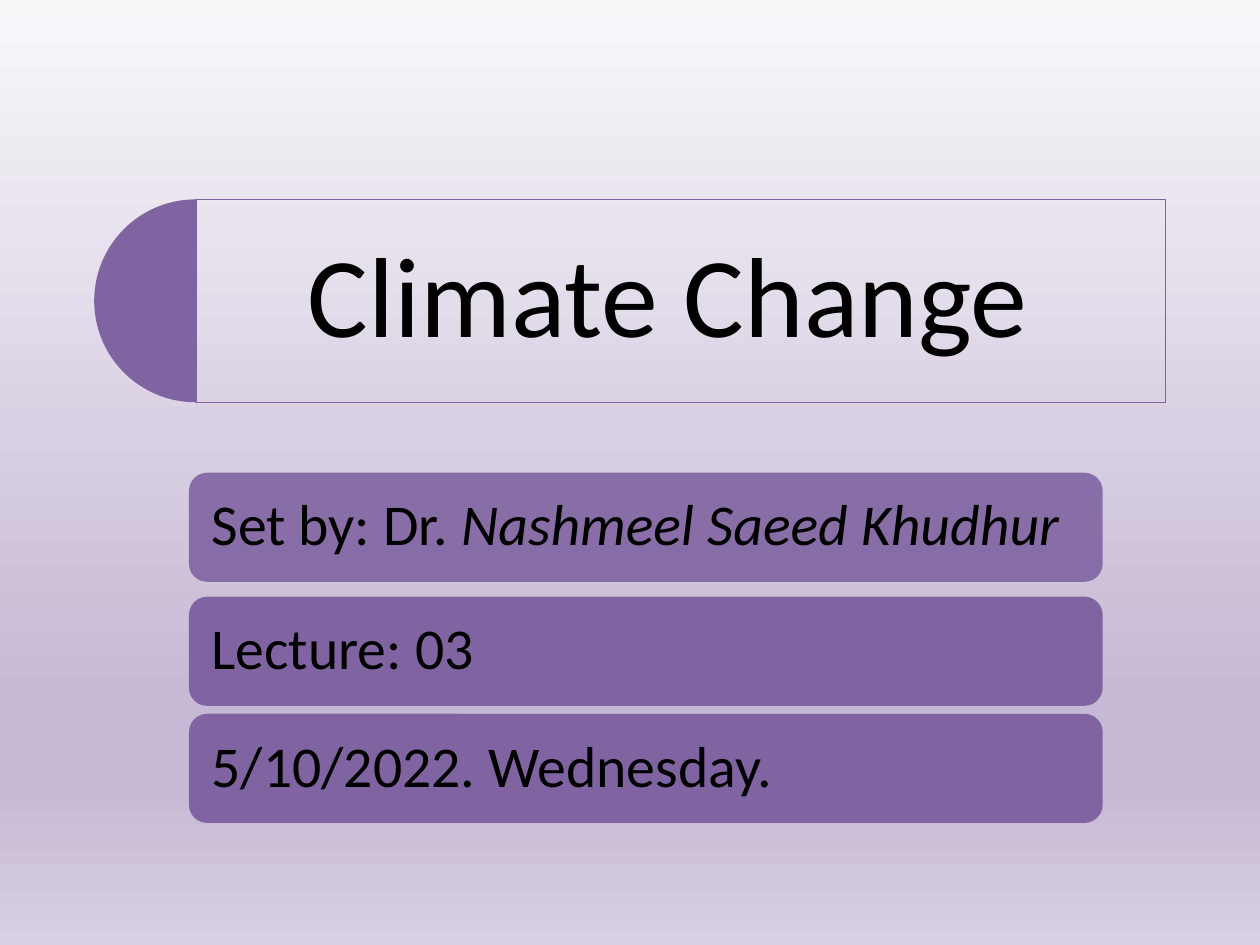
from lxml import etree
from pptx import Presentation, util as u
from pptx.dml.color import RGBColor
from pptx.enum import shapes, text
from pptx.oxml.ns import qn

PURPLE = RGBColor(0x80, 0x64, 0xA2)
BLACK = RGBColor(0, 0, 0)
SKY = [(0, RGBColor(0xF9, 0xF7, 0xFA)), (74, RGBColor(0xC6, 0xB9, 0xD5)),
       (83, RGBColor(0xC6, 0xB9, 0xD5)), (100, RGBColor(0xD9, 0xD0, 0xE3))]


class CoverSlide:
    font = "Calibri"

    def __init__(self, prs):
        self.slide = prs.slides.add_slide(prs.slide_layouts[5])

    def background(self, stops):
        fill = self.slide.background.fill
        fill.gradient()
        fill.gradient_angle = 270
        stop_list = self.slide.element.find(".//" + qn("a:gsLst"))
        for old_stop in list(stop_list):
            stop_list.remove(old_stop)
        for percent, color in stops:
            stop = etree.SubElement(stop_list, qn("a:gs"), pos=str(percent * 1000))
            etree.SubElement(stop, qn("a:srgbClr"), val=str(color))

    def put_text(self, shape, parts, size, align, inset):
        """Fill the shape with one paragraph of (wording, italic) parts."""
        frame = shape.text_frame
        frame.word_wrap = True
        frame.auto_size = text.MSO_AUTO_SIZE.NONE
        frame.vertical_anchor = text.MSO_ANCHOR.MIDDLE
        frame.margin_left = frame.margin_right = u.Cm(inset)
        frame.margin_top = frame.margin_bottom = u.Cm(inset)
        line = frame.paragraphs[0]
        line.alignment = align
        line.line_spacing = 0.9
        for wording, italic in parts:
            run = line.add_run()
            run.text = wording
            run.font.name = self.font
            run.font.size = u.Pt(size)
            run.font.italic = italic
            run.font.color.rgb = BLACK

    def title(self, wording, left, top, width, height):
        heading = self.slide.shapes.title
        heading.left, heading.top = u.Cm(left), u.Cm(top)
        heading.width, heading.height = u.Cm(width), u.Cm(height)
        heading.line.color.rgb = PURPLE
        heading.line.width = u.Pt(0.75)
        self.put_text(heading, [(wording, False)], 65, text.PP_ALIGN.CENTER, 0.69)

    def block(self, kind, left, top, width, height, opacity=100):
        shape = self.slide.shapes.add_shape(
            kind, u.Cm(left), u.Cm(top), u.Cm(width), u.Cm(height))
        shape.shadow.inherit = False
        shape.fill.solid()
        shape.fill.fore_color.rgb = PURPLE
        shape.line.fill.background()
        if opacity < 100:
            color = shape.element.spPr.find(".//" + qn("a:srgbClr"))
            etree.SubElement(color, qn("a:alpha"), val=str(opacity * 1000))
        return shape

    def half_disc(self, left, top, size):
        disc = self.block(shapes.MSO_SHAPE.PIE, left, top, size, size)
        disc.adjustments[0] = 54   # from 90 degrees
        disc.adjustments[1] = 162  # to 270 degrees

    def bar(self, parts, top, opacity):
        bar = self.block(shapes.MSO_SHAPE.ROUNDED_RECTANGLE,
                         3.81, top, 18.42, 2.2, opacity)
        self.put_text(bar, parts, 33, text.PP_ALIGN.LEFT, 0.35)


def main():
    prs = Presentation()
    prs.slide_width, prs.slide_height = u.Cm(25.4), u.Cm(19.05)
    cover = CoverSlide(prs)
    cover.background(SKY)

    # Heading with its half disc
    cover.title("Climate Change ", 3.95, 4.02, 19.55, 4.09)
    cover.half_disc(1.9, 4.02, 4.09)

    # Lecture details
    details = [
        ([("Set by: Dr. ", False), ("Nashmeel Saeed Khudhur", True)], 9.53, 90),
        ([("Lecture: 03", False)], 12.03, 100),
        ([("5/10/2022. Wednesday.", False)], 14.39, 100),
    ]
    for parts, top, opacity in details:
        cover.bar(parts, top, opacity)

    prs.save("out.pptx")


if __name__ == "__main__":
    main()
